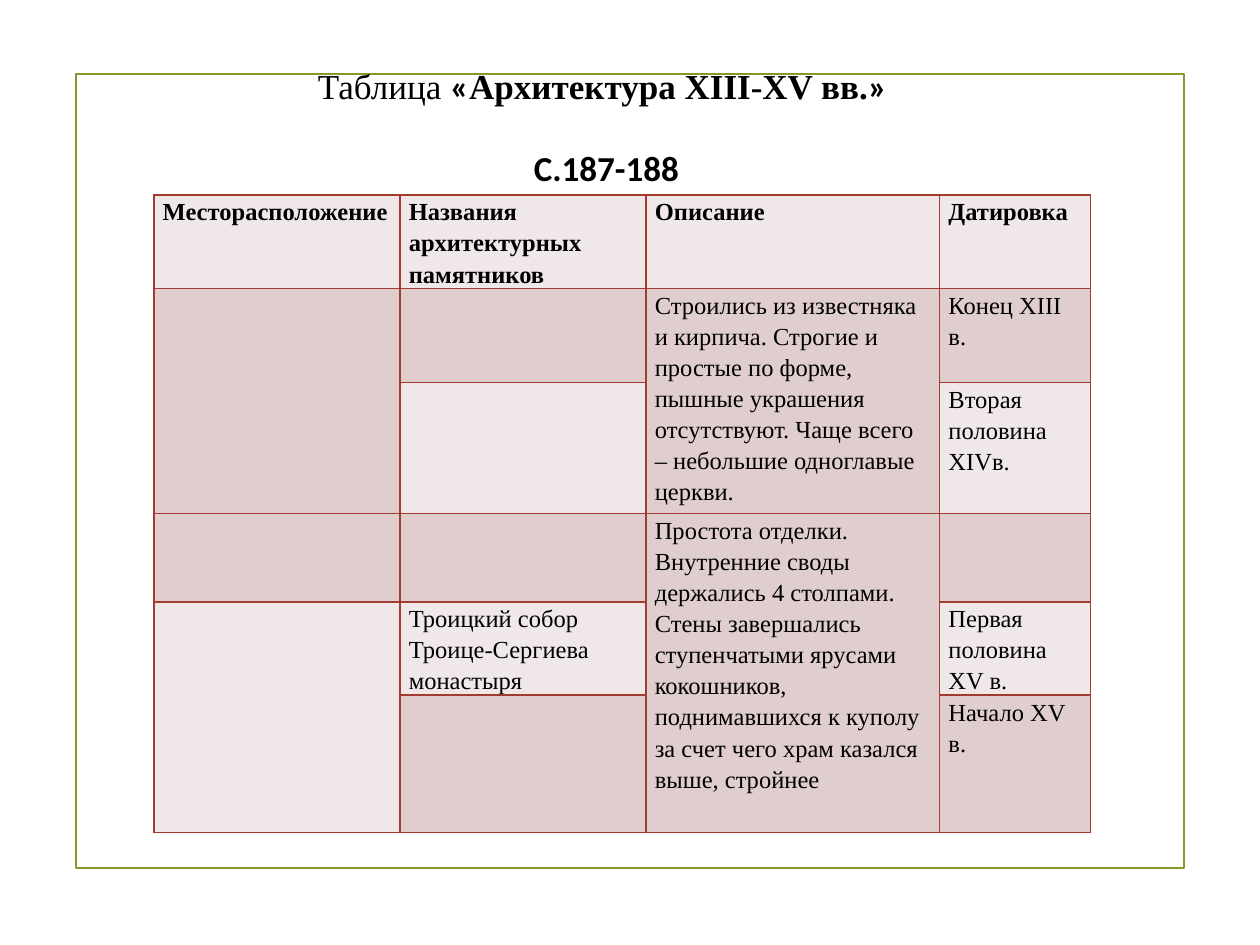
from lxml import etree
from pptx import Presentation
from pptx import util as u
from pptx.dml.color import RGBColor
from pptx.enum import shapes, text
from pptx.oxml.ns import qn

BLACK = RGBColor(0x00, 0x00, 0x00)
GREEN = RGBColor(0x83, 0x99, 0x2A)
RED = RGBColor(0xA2, 0x3C, 0x33)
PALE = RGBColor(0xF0, 0xE8, 0xE8)
ROSE = RGBColor(0xE0, 0xCE, 0xCE)
SERIF, SANS = "Times New Roman", "Calibri"

COLS = [4.96, 4.96, 5.92, 3.04]
ROWS = [1.83, 1.9, 2.64, 1.78, 1.83, 2.77]
CELLS = [
    ["Месторасположение", "Названия архитектурных памятников", "Описание", "Датировка"],
    ["", "", "Строились из известняка и кирпича. Строгие и простые по форме, "
     "пышные украшения отсутствуют. Чаще всего – небольшие одноглавые церкви.",
     "Конец XIII в."],
    ["", "", "", "Вторая половина XIVв."],
    ["", "", "Простота отделки. Внутренние своды держались 4 столпами. "
     "Стены завершались ступенчатыми ярусами кокошников, поднимавшихся к куполу "
     "за счет чего храм казался выше, стройнее", ""],
    ["", "Троицкий собор Троице-Сергиева монастыря", "", "Первая половина XV в."],
    ["", "", "", "Начало XV в."],
]
# First row, last row, column
SPANS = [(1, 2, 0), (1, 2, 2), (3, 5, 2), (4, 5, 0)]


class Deck:
    def __init__(self):
        self.prs = Presentation()
        self.prs.slide_width, self.prs.slide_height = u.Cm(25.4), u.Cm(19.05)
        self.slide = self.prs.slides.add_slide(self.prs.slide_layouts[6])

    def font(self, item, name, size, bold):
        font = item.font
        font.name, font.size, font.bold = name, u.Pt(size), bold
        font.color.rgb = BLACK

    def frame(self, *box):
        rect = self.slide.shapes.add_shape(
            shapes.MSO_SHAPE.RECTANGLE, *map(u.Cm, box))
        rect.shadow.inherit = False
        rect.fill.background()
        rect.line.color.rgb = GREEN
        rect.line.width = u.Pt(1.25)

    def border(self, cell):
        props = cell._tc.get_or_add_tcPr()
        for side in ("lnL", "lnR", "lnT", "lnB"):
            line = etree.SubElement(props, qn("a:" + side), w=str(u.Pt(1)))
            fill = etree.SubElement(line, qn("a:solidFill"))
            etree.SubElement(fill, qn("a:srgbClr"), val=str(RED))

    def table(self, left, top):
        grid = self.slide.shapes.add_table(
            len(ROWS), len(COLS), u.Cm(left), u.Cm(top),
            u.Cm(sum(COLS)), u.Cm(sum(ROWS))).table
        for col, width in zip(grid.columns, COLS):
            col.width = u.Cm(width)
        for row, height in zip(grid.rows, ROWS):
            row.height = u.Cm(height)
        for i, line in enumerate(CELLS):
            for j, words in enumerate(line):
                self.cell(grid.cell(i, j), words, i)
        for first, last, col in SPANS:
            grid.cell(first, col).merge(grid.cell(last, col))

    def cell(self, cell, words, row):
        self.border(cell)
        cell.fill.solid()
        cell.fill.fore_color.rgb = ROSE if row % 2 else PALE
        cell.margin_left = cell.margin_right = u.Cm(0.18)
        cell.margin_top = cell.margin_bottom = 0
        cell.text = words
        para = cell.text_frame.paragraphs[0]
        para.line_spacing = 1.15
        self.font(para, SERIF, 14, row == 0)

    def title(self, box, lines, gap):
        frame = self.slide.shapes.add_textbox(*map(u.Cm, box)).text_frame
        frame.word_wrap = True
        frame.vertical_anchor = text.MSO_ANCHOR.TOP
        frame.margin_top = u.Cm(0.18)
        for i, runs in enumerate(lines):
            para = frame.add_paragraph() if i else frame.paragraphs[0]
            para.alignment = text.PP_ALIGN.CENTER
            para._p.get_or_add_pPr().set("indent", str(u.Cm(0.25)))
            if i:
                para.space_before = u.Pt(gap)
            for words, name, bold in runs:
                run = para.add_run()
                run.text = words
                self.font(run, name, 20, bold)


def main():
    deck = Deck()
    # Border of the slide
    deck.frame(1.54, 1.5, 22.33, 16)
    # Table of monuments
    deck.table(3.1, 3.93)
    # Heading
    deck.title((4.7, 1.12, 14.8, 4.2), [
        [("Таблица ", SERIF, False), ("«", SANS, True),
         ("Архитектура XIII-XV вв.", SERIF, True), ("» ", SANS, True)],
        [("С.187-188", SANS, True)],
    ], 23)
    deck.prs.save("out.pptx")


if __name__ == "__main__":
    main()
